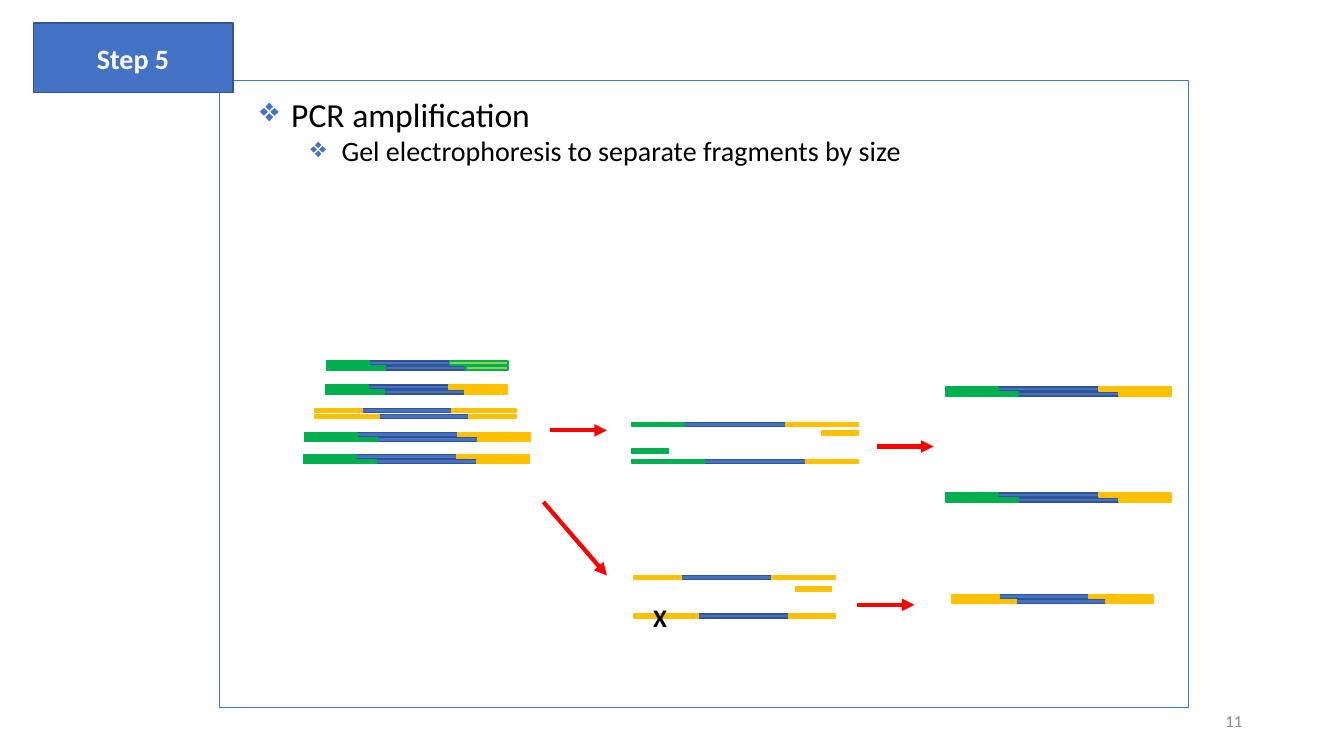
from lxml.etree import SubElement
from pptx import Presentation
from pptx.dml.color import RGBColor
from pptx.enum.shapes import MSO_CONNECTOR as Connector, MSO_SHAPE as Shape
from pptx.enum.text import MSO_ANCHOR as Anchor, MSO_AUTO_SIZE as AutoSize, PP_ALIGN as Align
from pptx.oxml.ns import qn
from pptx.util import Inches, Pt

BLUE = RGBColor(0x44, 0x72, 0xC4)
DARK_BLUE = RGBColor(0x32, 0x54, 0x91)
GREEN = RGBColor(0x00, 0xB0, 0x50)
LIME = RGBColor(0x92, 0xD0, 0x50)
YELLOW = RGBColor(0xFF, 0xC0, 0x00)
RED = RGBColor(0xFF, 0x00, 0x00)
GRAY = RGBColor(0x8C, 0x8C, 0x8C)
BLACK = RGBColor(0x00, 0x00, 0x00)
WHITE = RGBColor(0xFF, 0xFF, 0xFF)

# Fragment sizes: short adapter, long adapter, insert
SMALL = (0.42, 0.58, 0.8)
MEDIUM = (0.47, 0.64, 0.89)
LARGE = (0.52, 0.72, 1.0)
STRAND = 0.04
PRIMER = (0.36, 0.05)

# left, top, size, left adapter, right adapter, distance between strands
FRAGMENTS = [
    (3.23, 3.82, SMALL, GREEN, YELLOW, 0.05),
    (3.12, 4.05, MEDIUM, YELLOW, YELLOW, 0.06),
    (3.24, 3.58, SMALL, GREEN, LIME, 0.05),
    (3.01, 4.51, LARGE, GREEN, YELLOW, 0.05),
    (3.02, 4.29, LARGE, GREEN, YELLOW, 0.05),
    (6.27, 4.19, LARGE, GREEN, YELLOW, 0.37),
    (9.38, 3.84, LARGE, GREEN, YELLOW, 0.05),
    (9.38, 4.89, LARGE, GREEN, YELLOW, 0.05),
    (6.29, 5.71, MEDIUM, YELLOW, YELLOW, 0.38),
    (9.44, 5.9, MEDIUM, YELLOW, YELLOW, 0.05),
]
PRIMERS = [(6.27, 4.45, GREEN), (8.15, 4.27, YELLOW), (7.89, 5.82, YELLOW)]
ARROWS = [
    ((5.45, 4.27), (6.02, 4.27)),
    ((8.7, 4.43), (9.26, 4.43)),
    ((8.5, 6), (9.07, 6)),
    ((5.39, 4.98), (6.02, 5.71)),
]


class SlideBuilder:
    font = "Calibri"

    def __init__(self, page):
        self.page = page

    def bar(self, left, top, width, height, fill, line, parent=None):
        """Add a rectangle to the page or to a group; fill None leaves it open."""
        shapes = (parent or self.page).shapes
        box = shapes.add_shape(Shape.RECTANGLE, *map(Inches, (left, top, width, height)))
        box.shadow.inherit = False
        if fill is None:
            box.fill.background()
        else:
            box.fill.solid()
            box.fill.fore_color.rgb = fill
        box.line.color.rgb = line
        box.line.width = Pt(1)
        return box

    def style(self, para, text, size, color, bold=False, align=Align.LEFT):
        para.text = text
        para.alignment = align
        font = para.font
        font.name, font.size, font.bold = self.font, Pt(size), bold
        font.color.rgb = color

    def text_box(self, left, top, width, height, wrap=True):
        box = self.page.shapes.add_textbox(*map(Inches, (left, top, width, height)))
        box.text_frame.word_wrap = wrap
        return box.text_frame

    def bullet(self, para, text, size, level, indent):
        self.style(para, text, size, BLACK)
        para.level = level
        props = para._p.get_or_add_pPr()
        props.set("marL", str(Inches(indent)))
        props.set("indent", str(Inches(-0.31)))
        color = SubElement(props, qn("a:buClr"))
        SubElement(color, qn("a:srgbClr"), val=str(BLUE))
        SubElement(props, qn("a:buChar"), char="❖")

    def fragment(self, left, top, size, left_color, right_color, spacing):
        """Draw two offset strands, each an insert between two adapters."""
        short, long, insert = size
        group = self.page.shapes.add_group_shape()
        strands = [(top, short, long), (top + spacing, long, short)]
        for y, before, _ in strands:
            self.bar(left + before, y, insert, STRAND, BLUE, DARK_BLUE, group)
        right_line = GREEN if right_color == LIME else right_color
        for y, before, after in strands:
            self.bar(left, y, before, STRAND, left_color, left_color, group)
            self.bar(left + before + insert, y, after, STRAND, right_color, right_line, group)

    def arrow(self, start, end):
        line = self.page.shapes.add_connector(Connector.STRAIGHT, *map(Inches, start + end))
        line.line.color.rgb = RED
        line.line.width = Pt(3)
        SubElement(line.line._get_or_add_ln(), qn("a:tailEnd"), type="triangle")
        SubElement(line._element.spPr, qn("a:effectLst"))


def main():
    deck = Presentation()
    deck.slide_width, deck.slide_height = Inches(13.33), Inches(7.5)
    builder = SlideBuilder(deck.slides.add_slide(deck.slide_layouts[6]))

    builder.bar(2.18, 0.8, 9.61, 6.22, None, BLUE)
    step = builder.bar(0.33, 0.23, 1.98, 0.69, BLUE, DARK_BLUE).text_frame
    step.vertical_anchor = Anchor.MIDDLE
    builder.style(step.paragraphs[0], "Step 5", 20, WHITE, True, Align.CENTER)

    number = builder.text_box(9.42, 6.95, 3, 0.4)
    number.vertical_anchor = Anchor.MIDDLE
    builder.style(number.paragraphs[0], "11", 12, GRAY, align=Align.RIGHT)

    heading = builder.text_box(2.48, 0.88, 9.15, 0.84)
    heading.auto_size = AutoSize.SHAPE_TO_FIT_TEXT
    builder.bullet(heading.paragraphs[0], "PCR amplification", 24, 0, 0.31)
    builder.bullet(heading.add_paragraph(),
                   "Gel electrophoresis to separate fragments by size", 20, 1, 0.81)

    for fragment in FRAGMENTS:
        builder.fragment(*fragment)
    for left, top, color in PRIMERS:
        builder.bar(left, top, *PRIMER, color, color)
    for start, end in ARROWS:
        builder.arrow(start, end)

    cross = builder.text_box(6.38, 5.93, 0.34, 0.4, wrap=False)
    cross.auto_size = AutoSize.SHAPE_TO_FIT_TEXT
    builder.style(cross.paragraphs[0], "X", 18, BLACK, True)

    deck.save("out.pptx")


if __name__ == "__main__":
    main()
